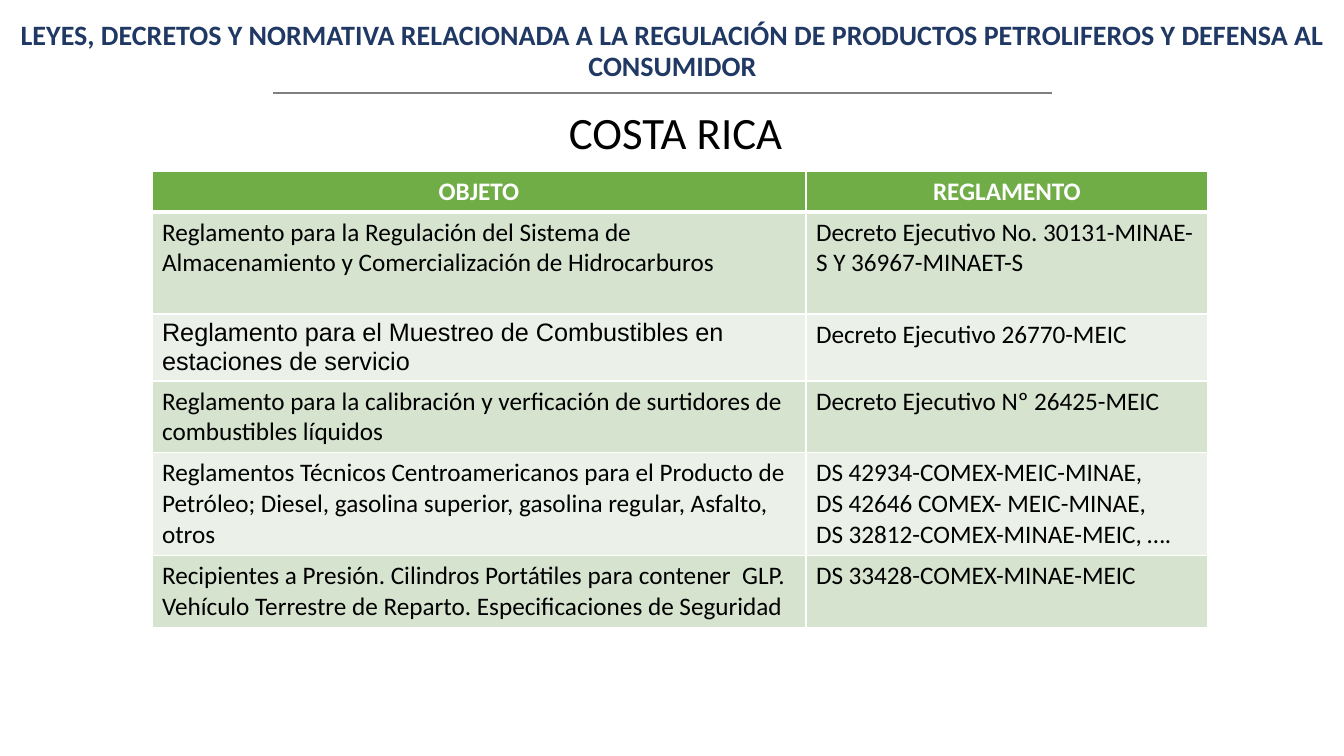
from lxml.etree import SubElement
from pptx import Presentation
from pptx.dml.color import RGBColor as Rgb
from pptx.enum.shapes import MSO_CONNECTOR as Link
from pptx.enum.text import MSO_ANCHOR as Anchor, MSO_AUTO_SIZE as Fit, PP_ALIGN as Align
from pptx.oxml import parse_xml
from pptx.oxml.ns import nsdecls, qn
from pptx.util import Pt

SCALE = 914400 / 100.8

ROWS = [
    (41, "OBJETO", "REGLAMENTO"),
    (102, "Reglamento para la Regulación del Sistema de Almacenamiento y "
     "Comercialización de Hidrocarburos",
     "Decreto Ejecutivo No. 30131-MINAE-S Y 36967-MINAET-S"),
    (67, "Reglamento para el Muestreo de Combustibles en estaciones de servicio",
     "Decreto Ejecutivo 26770-MEIC"),
    (71, "Reglamento para la calibración y verficación de surtidores de "
     "combustibles líquidos",
     "Decreto Ejecutivo Nº 26425-MEIC"),
    (103, "Reglamentos Técnicos Centroamericanos para el Producto de Petróleo; "
     "Diesel, gasolina superior, gasolina regular, Asfalto, otros",
     "DS 42934-COMEX-MEIC-MINAE,\nDS 42646 COMEX- MEIC-MINAE,\n"
     "DS 32812-COMEX-MINAE-MEIC, …."),
    (71, "Recipientes a Presión. Cilindros Portátiles para contener  GLP. "
     "Vehículo Terrestre de Reparto. Especificaciones de Seguridad",
     "DS 33428-COMEX-MINAE-MEIC"),
]


def px(n):
    return round(n * SCALE)


def tint(code):
    return Rgb.from_string(code)


class Page:
    face = "Calibri"
    ink = "000000"
    head = "70AD47"
    bands = "EBF1E9", "D5E3CF"
    rule = "FFFFFF"

    def __init__(self, deck):
        self.slide = deck.slides.add_slide(deck.slide_layouts[6])
        self.shapes = self.slide.shapes

    def style(self, frame, size, color, bold=False, align=Align.LEFT, face=face):
        for para in frame.paragraphs:
            para.alignment = align
            font = para.font
            font.name, font.size, font.bold = face, Pt(size), bold
            font.color.rgb = tint(color)

    def text(self, box, words, size, color, wrap=True, **look):
        frame = self.shapes.add_textbox(*map(px, box)).text_frame
        frame.word_wrap = wrap
        frame.text = words
        self.style(frame, size, color, **look)
        return frame

    def line(self, x, y, end, color):
        line = self.shapes.add_connector(Link.STRAIGHT, px(x), px(y), px(end), px(y))
        line.line.color.rgb = tint(color)
        line.line.width = Pt(1)
        SubElement(line._element.spPr, qn("a:effectLst"))

    def edges(self, cell, top, bottom):
        """Draw the four borders of a cell; widths are in points."""
        props = cell._tc.get_or_add_tcPr()
        widths = {"L": 1, "R": 1, "T": top, "B": bottom}
        for spot, (side, width) in enumerate(widths.items()):
            props.insert(spot, parse_xml(
                f'<a:ln{side} {nsdecls("a")} w="{Pt(width)}"><a:solidFill>'
                f'<a:srgbClr val="{self.rule}"/></a:solidFill></a:ln{side}>'))

    def table(self, x, y, cols, rows, faces):
        """Fill a banded table; faces maps (row, column) to a special font."""
        high = sum(row[0] for row in rows)
        grid = self.shapes.add_table(len(rows), len(cols), px(x), px(y),
                                     px(sum(cols)), px(high)).table
        for col, wide in zip(grid.columns, cols):
            col.width = px(wide)
        for r, (tall, *words) in enumerate(rows):
            grid.rows[r].height = px(tall)
            for c, word in enumerate(words):
                cell = grid.cell(r, c)
                cell.text = word
                cell.fill.solid()
                cell.fill.fore_color.rgb = tint(self.bands[r % 2] if r else self.head)
                self.edges(cell, 3 if r == 1 else 1, 1 if r else 3)
                if r:
                    self.style(cell.text_frame, 18, self.ink,
                               face=faces.get((r, c), self.face))
                else:
                    self.style(cell.text_frame, 18, self.rule, True, Align.CENTER)


def main():
    deck = Presentation()
    deck.slide_width, deck.slide_height = px(1344), px(756)
    page = Page(deck)
    page.table(152, 171, (654, 402), ROWS, {(2, 0): "Arial"})
    title = page.text((6, -16, 1333, 136),
                      "LEYES, DECRETOS Y NORMATIVA RELACIONADA A LA REGULACIÓN DE "
                      "PRODUCTOS PETROLIFEROS Y DEFENSA AL CONSUMIDOR",
                      20, "203864", bold=True, align=Align.CENTER)
    title.vertical_anchor = Anchor.MIDDLE
    title.paragraphs[0].line_spacing = 0.9
    land = page.text((559, 100, 263, 65), "COSTA RICA", 32, page.ink)
    land.auto_size = Fit.SHAPE_TO_FIT_TEXT
    page.line(273, 93, 1052, "808080")
    deck.save("out.pptx")


if __name__ == "__main__":
    main()
